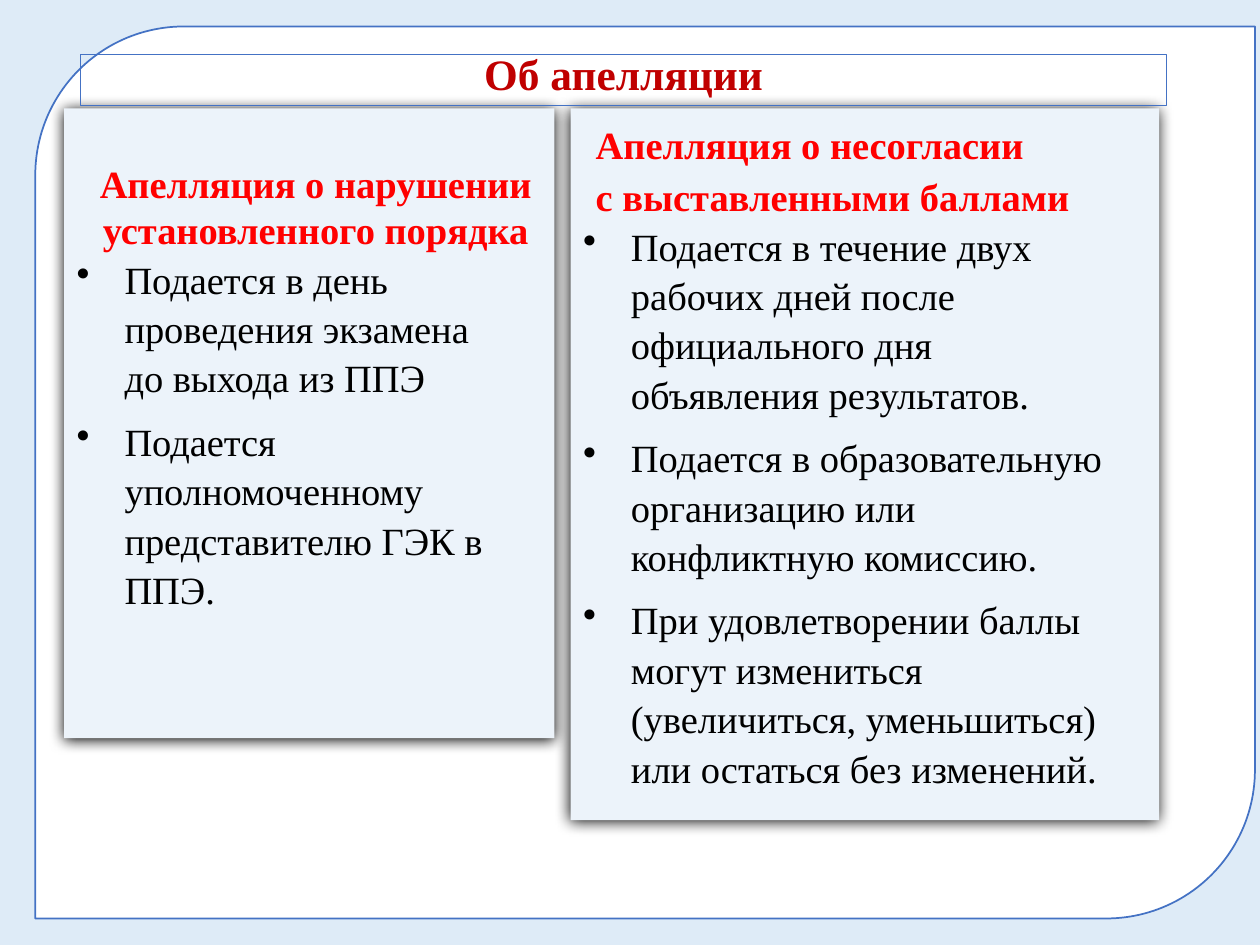
from dataclasses import dataclass

from lxml import etree
from pptx import Presentation
from pptx.dml.color import RGBColor
from pptx.enum.shapes import MSO_SHAPE
from pptx.enum.text import MSO_ANCHOR, PP_ALIGN
from pptx.oxml.ns import qn
from pptx.util import Inches, Pt

RECTANGLE = MSO_SHAPE.RECTANGLE
SHEET_SHAPE = MSO_SHAPE.ROUND_2_DIAG_RECTANGLE
TOP, MIDDLE = MSO_ANCHOR.TOP, MSO_ANCHOR.MIDDLE
LEFT, CENTER = PP_ALIGN.LEFT, PP_ALIGN.CENTER


@dataclass(frozen=True)
class Theme:
    font: str = "Times New Roman"
    background: str = "DEEBF7"
    sheet: str = "FFFFFF"
    outline: str = "4472C4"
    card: str = "ECF3FA"
    title: str = "C00000"
    heading: str = "FF0000"
    body: str = "000000"
    title_size: float = 24.8
    text_size: float = 22


theme = Theme()


def add_box(shape_kind, bounds, fill=None, line_width=None):
    box = page.shapes.add_shape(shape_kind, *[Inches(value) for value in bounds])
    box.shadow.inherit = False
    if fill:
        box.fill.solid()
        box.fill.fore_color.rgb = RGBColor.from_string(fill)
    else:
        box.fill.background()
    if line_width:
        box.line.color.rgb = RGBColor.from_string(theme.outline)
        box.line.width = Pt(line_width)
    else:
        box.line.fill.background()
    box.text_frame.word_wrap = True
    return box


def write(para, text, size, color, bold=False, align=LEFT):
    para.text = text
    para.alignment = align
    para.font.name = theme.font
    para.font.size = Pt(size)
    para.font.bold = bold
    para.font.color.rgb = RGBColor.from_string(color)


deck = Presentation()
deck.slide_width, deck.slide_height = Inches(10), Inches(7.5)
page = deck.slides.add_slide(deck.slide_layouts[6])
page.background.fill.solid()
page.background.fill.fore_color.rgb = RGBColor.from_string(theme.background)

# White sheet with two rounded corners
add_box(SHEET_SHAPE, (0.28, 0.21, 9.68, 7.08), theme.sheet, 1)

# Two cards: left, width, height, top inset, right inset, heading, bullets
CARD_TOP = 0.86
cards = [
    (0.51, 3.89, 5, 0.41, 0.1, CENTER,
     ["Апелляция о нарушении установленного порядка"],
     ["Подается в день проведения экзамена\vдо выхода из ППЭ",
      "Подается уполномоченному представителю ГЭК в ППЭ."]),
    (4.53, 4.67, 5.65, 0.1, 0.4, LEFT,
     ["Апелляция о несогласии", "с выставленными баллами"],
     ["Подается в течение двух рабочих дней после официального дня объявления результатов.",
      "Подается в образовательную организацию или конфликтную комиссию.",
      "При удовлетворении баллы могут измениться (увеличиться, уменьшиться) "
      "или остаться без изменений."]),
]
for left, width, height, top_inset, right_inset, align, headings, bullets in cards:
    card = add_box(RECTANGLE, (left, CARD_TOP, width, height), theme.card)
    frame = card.text_frame
    frame.vertical_anchor = TOP
    frame.margin_top, frame.margin_right = Inches(top_inset), Inches(right_inset)

    # Soft shadow under the card
    effects = card._element.spPr.find(qn("a:effectLst"))
    shadow = etree.SubElement(effects, qn("a:outerShdw"), blurRad=str(Pt(8.5)),
                              dist=str(Pt(1)), dir="5400000", rotWithShape="0")
    etree.SubElement(shadow, qn("a:srgbClr"), val="000000")

    for index, text in enumerate(headings + bullets):
        para = frame.add_paragraph() if index else frame.paragraphs[0]
        properties = para._p.get_or_add_pPr()
        if index < len(headings):
            write(para, text, theme.text_size, theme.heading, True, align)
            para.space_before = Pt(3.5)
            properties.set("marL", str(Inches(0.1)))
            properties.set("indent", "0")
        else:
            write(para, text, theme.text_size, theme.body)
            para.line_spacing = 1.07
            para.space_after = Pt(8)
            properties.set("marL", str(Inches(0.38)))
            properties.set("indent", str(-Inches(0.38)))
            bullet = etree.Element(qn("a:buChar"), char="•")
            properties.find(qn("a:defRPr")).addprevious(bullet)

# Title frame
title = add_box(RECTANGLE, (0.64, 0.43, 8.62, 0.41), line_width=0.75)
title.text_frame.vertical_anchor = MIDDLE
title_para = title.text_frame.paragraphs[0]
write(title_para, "Об апелляции", theme.title_size, theme.title, True, CENTER)
title_para.line_spacing = 0.7

deck.save("out.pptx")
